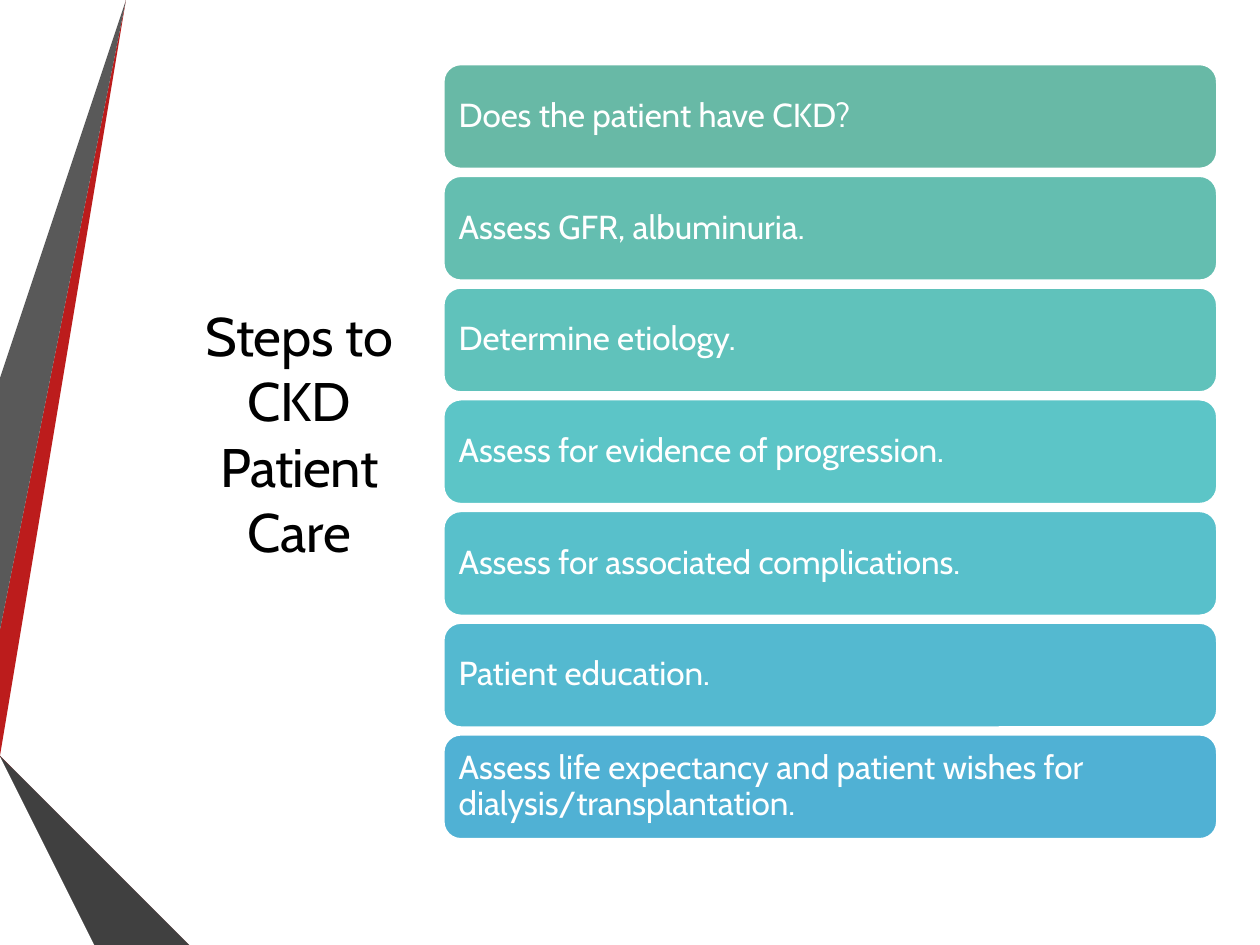
from pptx import Presentation
from pptx.dml.color import RGBColor
from pptx.enum.shapes import MSO_SHAPE as Shape
from pptx.enum.text import MSO_ANCHOR as Anchor, MSO_AUTO_SIZE as AutoSize, PP_ALIGN as Align
from pptx.util import Inches, Pt

FONT = "Cabin"
WHITE = "FFFFFF"

RIBBONS = [
    ("BC1C1C", [(0, 5.44), (0, 5.75), (0.22, 5.79), (1.17, 0), (0.89, 0)]),
    ("595959", [(0.83, 0), (0.55, 0), (0, 3.36), (0, 5.06)]),
    ("262626", [(0, 6.19), (0, 6.21), (0.93, 7.5), (0.99, 7.5)]),
    ("5E0E0E", [(0, 5.79), (0, 5.8), (1.56, 7.5), (1.63, 7.5)]),
    ("8D1515", [(0, 5.79), (1.63, 7.5), (2.33, 7.5), (0.22, 5.79), (0, 5.75)]),
    ("404040", [(0, 6.19), (0.99, 7.5), (1.51, 7.5), (0, 5.86)]),
]

# Text and letter spacing in points
TITLE_PARTS = [("Steps ", -0.1), ("to ", -0.2), ("CKD ", -0.1), ("Patient ", -0.3), ("Care", -0.1)]

STEPS = [
    ("Does the patient have CKD?", "68B9A6"),
    ("Assess GFR, albuminuria.", "64BEB0"),
    ("Determine etiology.", "60C2BB"),
    ("Assess for evidence of progression.", "5CC5C7"),
    ("Assess for associated complications.", "58C0CB"),
    ("Patient education.", "54B9D0"),
    ("Assess life expectancy and patient wishes for dialysis/transplantation.", "50B1D4"),
]
FIRST_TOP, LAST_TOP = 0.51, 5.83


def rgb(color):
    return RGBColor.from_string(color)


def write_text(shape, parts, *, size, color, align, inset, line_spacing=1.0):
    """Fill a shape with one paragraph of (text, letter spacing) parts."""
    frame = shape.text_frame
    frame.word_wrap = True
    frame.auto_size = AutoSize.NONE
    frame.vertical_anchor = Anchor.MIDDLE
    frame.margin_left = frame.margin_right = Inches(inset)
    frame.margin_top = frame.margin_bottom = Inches(inset)
    paragraph = frame.paragraphs[0]
    paragraph.alignment = align
    paragraph.line_spacing = line_spacing
    for text, spacing in parts:
        run = paragraph.add_run()
        run.text = text
        run.font.name = FONT
        run.font.size = Pt(size)
        run.font.color.rgb = rgb(color)
        if spacing:
            run.font._element.set("spc", str(round(spacing * 100)))


def paint(shape, color):
    shape.shadow.inherit = False
    shape.fill.solid()
    shape.fill.fore_color.rgb = rgb(color)


def add_ribbon(slide, color, points):
    builder = slide.shapes.build_freeform(*points[0], scale=Inches(1))
    builder.add_line_segments(points[1:], close=True)
    ribbon = builder.convert_to_shape()
    paint(ribbon, color)
    ribbon.line.fill.background()


def place_title(slide):
    title = slide.shapes.title
    title.left, title.top = Inches(1.22), Inches(1.4)
    title.width, title.height = Inches(2.31), Inches(4.07)
    write_text(title, TITLE_PARTS, size=31, color="000000", align=Align.CENTER, inset=0.15)


def add_step(slide, text, color, top):
    step = slide.shapes.add_shape(
        Shape.ROUNDED_RECTANGLE, Inches(3.52), Inches(top), Inches(6.14), Inches(0.83))
    paint(step, color)
    step.line.color.rgb = rgb(WHITE)
    step.line.width = Pt(1.25)
    write_text(step, [(text, 0)], size=19, color=WHITE, align=Align.LEFT,
               inset=0.08, line_spacing=0.9)


def main():
    presentation = Presentation()
    presentation.slide_width, presentation.slide_height = Inches(10), Inches(7.5)
    slide = presentation.slides.add_slide(presentation.slide_layouts[5])
    for color, points in RIBBONS:
        add_ribbon(slide, color, points)
    place_title(slide)
    pitch = (LAST_TOP - FIRST_TOP) / (len(STEPS) - 1)
    for index, (text, color) in enumerate(STEPS):
        add_step(slide, text, color, FIRST_TOP + index * pitch)
    presentation.save("out.pptx")


if __name__ == "__main__":
    main()
